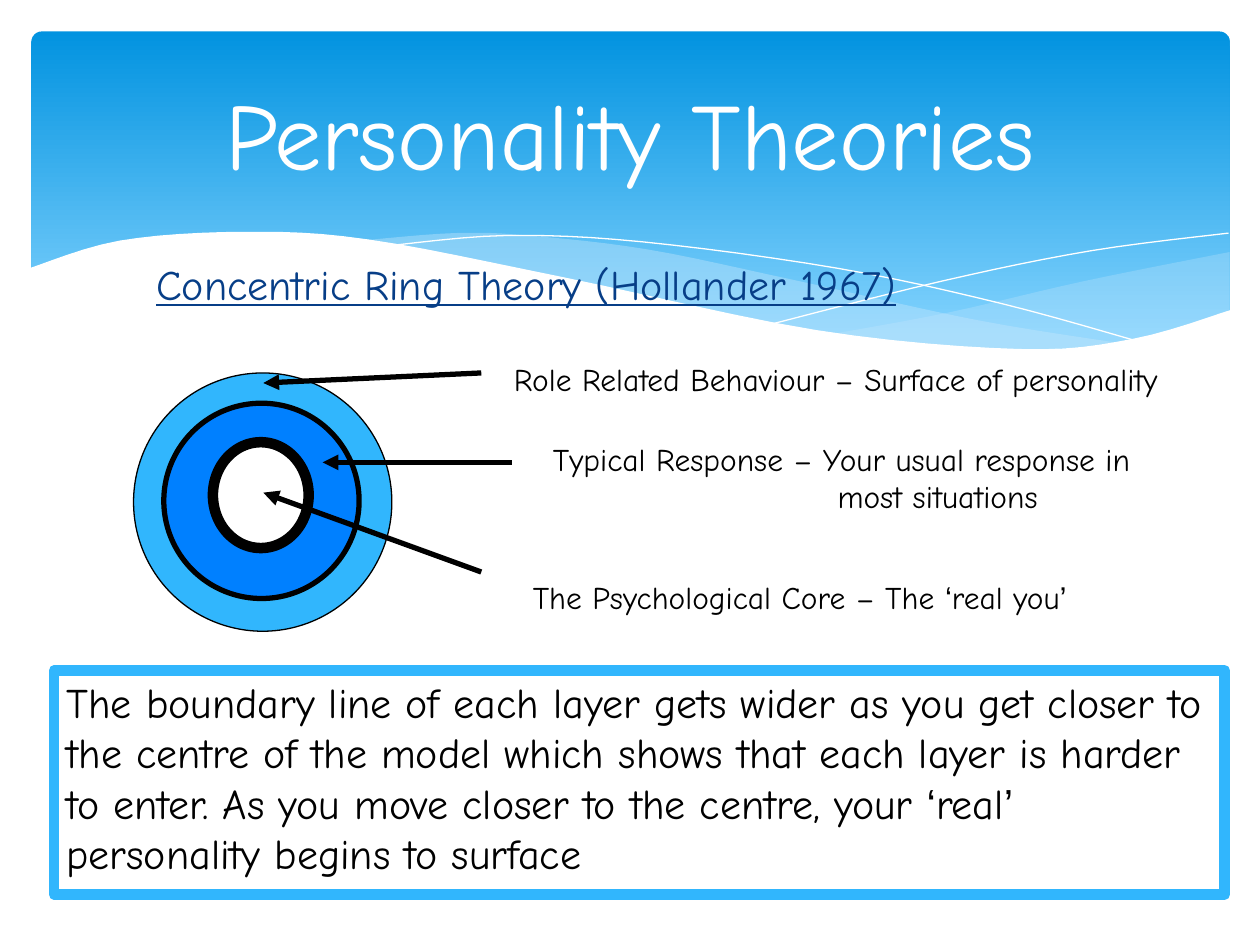
from dataclasses import dataclass
from itertools import groupby
from typing import Optional

from lxml.etree import SubElement
from pptx import Presentation
from pptx.dml.color import RGBColor
from pptx.enum.shapes import MSO_CONNECTOR, MSO_SHAPE
from pptx.enum.text import MSO_ANCHOR, PP_ALIGN
from pptx.oxml.ns import qn
from pptx.util import Inches, Pt

WHITE = RGBColor(0xFF, 0xFF, 0xFF)
BLACK = RGBColor(0x00, 0x00, 0x00)
SKY = RGBColor(0x31, 0xB6, 0xFD)
BLUE = RGBColor(0x00, 0x80, 0xFF)
NAVY = RGBColor(0x07, 0x3E, 0x87)
DEEP = RGBColor(0x02, 0x93, 0xE0)
LIGHT = RGBColor(0x83, 0xD3, 0xFE)
MIST = RGBColor(0xC6, 0xE7, 0xFC)
FONT = "Comic Neue"
QUOTES = "‘’"
PANEL = (0.43, 5.32, 9.29, 1.78)
STEPS = 6


@dataclass
class Wave:
    edges: list
    fill: Optional[RGBColor] = None
    alpha: int = 100


@dataclass
class Ring:
    box: tuple
    fill: Optional[RGBColor]
    line: RGBColor
    width: float
    kind: MSO_SHAPE = MSO_SHAPE.OVAL


@dataclass
class Label:
    box: tuple
    text: str
    size: int = 18
    color: RGBColor = BLACK
    under: Optional[bool] = None
    hang: float = 0


@dataclass
class Arrow:
    start: tuple
    end: tuple


WAVES = [
    Wave([[(9.76, 2), (8.61, 2.23), (7.53, 2.48), (6.61, 2.65)],
          [(6.61, 2.65), (7.45, 2.75), (8.35, 2.77), (9.13, 2.67), (9.76, 2.47)]],
         MIST, 29),
    Wave([[(8.93, 2.73), (7.75, 2.54), (6.29, 2.22), (5.14, 1.98), (4.2, 1.87),
           (3.61, 1.85), (2.86, 1.91)],
          [(2.86, 1.91), (4.49, 2.22), (6.01, 2.55), (7.22, 2.74), (8.07, 2.78),
           (8.93, 2.73)]], MIST, 40),
    Wave([[(3.09, 1.95), (4.01, 1.87), (5.1, 1.92), (6.65, 2.13), (7.95, 2.41),
           (9.07, 2.72)]]),
    Wave([[(6.13, 2.57), (7.48, 2.23), (8.66, 1.99), (9.75, 1.85)]]),
    Wave([[(9.77, 2.46), (8.99, 2.69), (8.09, 2.77), (6.48, 2.62), (4.47, 2.2),
           (2.92, 1.9), (1.93, 1.84), (0.95, 1.91), (0.23, 2.13)],
          [(0.23, 3.29), (9.77, 3.29)]], WHITE),
]
RINGS = [
    Ring((1.06, 2.96, 2.05, 2.05), SKY, BLACK, 0.75),
    Ring((1.3, 3.2, 1.55, 1.55), BLUE, BLACK, 3),
    Ring((1.69, 3.51, 0.76, 0.84), WHITE, BLACK, 6),
    Ring(PANEL, None, SKY, 6, MSO_SHAPE.RECTANGLE),
]
ARROWS = [
    Arrow((3.82, 2.96), (2.09, 3.04)),
    Arrow((4.06, 3.67), (2.56, 3.67)),
    Arrow((3.82, 4.54), (2.09, 3.91)),
]
LABELS = [
    Label((1.14, 2, 8.59, 4.5), "Concentric Ring Theory (Hollander 1967)",
          24, NAVY, True),
    Label(PANEL,
          "The boundary line of each layer gets wider as you get closer to "
          "the centre of the model which shows that each layer is harder to "
          "enter. As you move closer to the centre, your ‘real’ personality "
          "begins to surface", 24),
    Label((3.98, 2.81, 6.02, 0.4),
          "Role Related Behaviour – Surface of personality"),
    Label((4.29, 3.44, 5.2, 0.7),
          "Typical Response – Your usual response in most situations",
          hang=2.26),
    Label((4.13, 4.54, 5.35, 0.4), "The Psychological Core – The ‘real you’"),
]


def blend(a: float, b: float, c: float, d: float, t: float) -> float:
    return b + t / 2 * (c - a + t * (2 * a - 5 * b + 4 * c - d
                                     + t * (3 * (b - c) + d - a)))


def smooth(knots: list) -> list:
    ends = [knots[0], *knots, knots[-1]]
    curve = [tuple(blend(*axis, step / STEPS) for axis in zip(*ends[i:i + 4]))
             for i in range(len(knots) - 1) for step in range(STEPS)]
    return curve + [knots[-1]]


def write(para, text: str, size: int, color: RGBColor, under=None) -> None:
    for quoted, chars in groupby(text, lambda char: char in QUOTES):
        run = para.add_run()
        run.text = "".join(chars)
        style = {"name": "Arial" if quoted else FONT, "size": Pt(size),
                 "underline": under}
        for key, value in style.items():
            setattr(run.font, key, value)
        run.font.color.rgb = color


def paint(shape, fill: Optional[RGBColor]) -> None:
    shape.shadow.inherit = False
    if fill is None:
        shape.fill.background()
    else:
        shape.fill.solid()
        shape.fill.fore_color.rgb = fill


def draw_sky(shapes) -> None:
    sky = shapes.add_shape(MSO_SHAPE.ROUNDED_RECTANGLE,
                           *map(Inches, (0.25, 0.25, 9.51, 2.7)))
    sky.adjustments[0] = 0.03
    sky.shadow.inherit = False
    sky.line.fill.background()
    sky.fill.gradient()
    sky.fill.gradient_angle = 270
    for stop, color, place in zip(sky.fill.gradient_stops, (DEEP, LIGHT), (0, 0.9)):
        stop.color.rgb = color
        stop.position = place


def draw_wave(shapes, wave: Wave) -> None:
    first, *rest = [tuple(map(Inches, point))
                    for edge in wave.edges for point in smooth(edge)]
    pen = shapes.build_freeform(*first)
    pen.add_line_segments(rest, close=wave.fill is not None)
    shape = pen.convert_to_shape()
    paint(shape, wave.fill)
    if wave.fill is None:
        shape.line.color.rgb = WHITE
        shape.line.width = Pt(0)
    else:
        shape.line.fill.background()
    if wave.alpha < 100:
        color = shape.element.spPr.find(qn("a:solidFill"))[0]
        SubElement(color, qn("a:alpha"), val=str(wave.alpha * 1000))


def draw_ring(shapes, ring: Ring) -> None:
    shape = shapes.add_shape(ring.kind, *map(Inches, ring.box))
    paint(shape, ring.fill)
    shape.line.color.rgb = ring.line
    shape.line.width = Pt(ring.width)


def draw_arrow(shapes, arrow: Arrow) -> None:
    link = shapes.add_connector(MSO_CONNECTOR.STRAIGHT,
                                *map(Inches, arrow.start + arrow.end))
    link.line.color.rgb = BLACK
    link.line.width = Pt(3)
    SubElement(link.element.spPr.find(qn("a:ln")), qn("a:tailEnd"), type="triangle")
    SubElement(link.element.spPr, qn("a:effectLst"))


def draw_label(shapes, label: Label) -> None:
    frame = shapes.add_textbox(*map(Inches, label.box)).text_frame
    frame.word_wrap = True
    para = frame.paragraphs[0]
    write(para, label.text, label.size, label.color, label.under)
    if label.hang:
        props = para._p.get_or_add_pPr()
        props.set("marL", str(Inches(label.hang)))
        props.set("indent", str(-Inches(label.hang)))


def place_title(shapes) -> None:
    title = shapes.title
    box = dict(zip(("left", "top", "width", "height"),
                   map(Inches, (0.5, 0.37, 9, 1.37))))
    for key, value in box.items():
        setattr(title, key, value)
    title.text_frame.vertical_anchor = MSO_ANCHOR.MIDDLE
    para = title.text_frame.paragraphs[0]
    para.alignment = PP_ALIGN.CENTER
    write(para, "Personality Theories", 54, WHITE)
    title.element.getparent().append(title.element)


def main() -> None:
    deck = Presentation()
    deck.slide_width, deck.slide_height = Inches(10), Inches(7.5)
    shapes = deck.slides.add_slide(deck.slide_layouts[5]).shapes
    draw_sky(shapes)
    for items, draw in ((WAVES, draw_wave), (RINGS, draw_ring),
                        (ARROWS, draw_arrow), (LABELS, draw_label)):
        for item in items:
            draw(shapes, item)
    place_title(shapes)
    deck.save("out.pptx")


if __name__ == "__main__":
    main()
